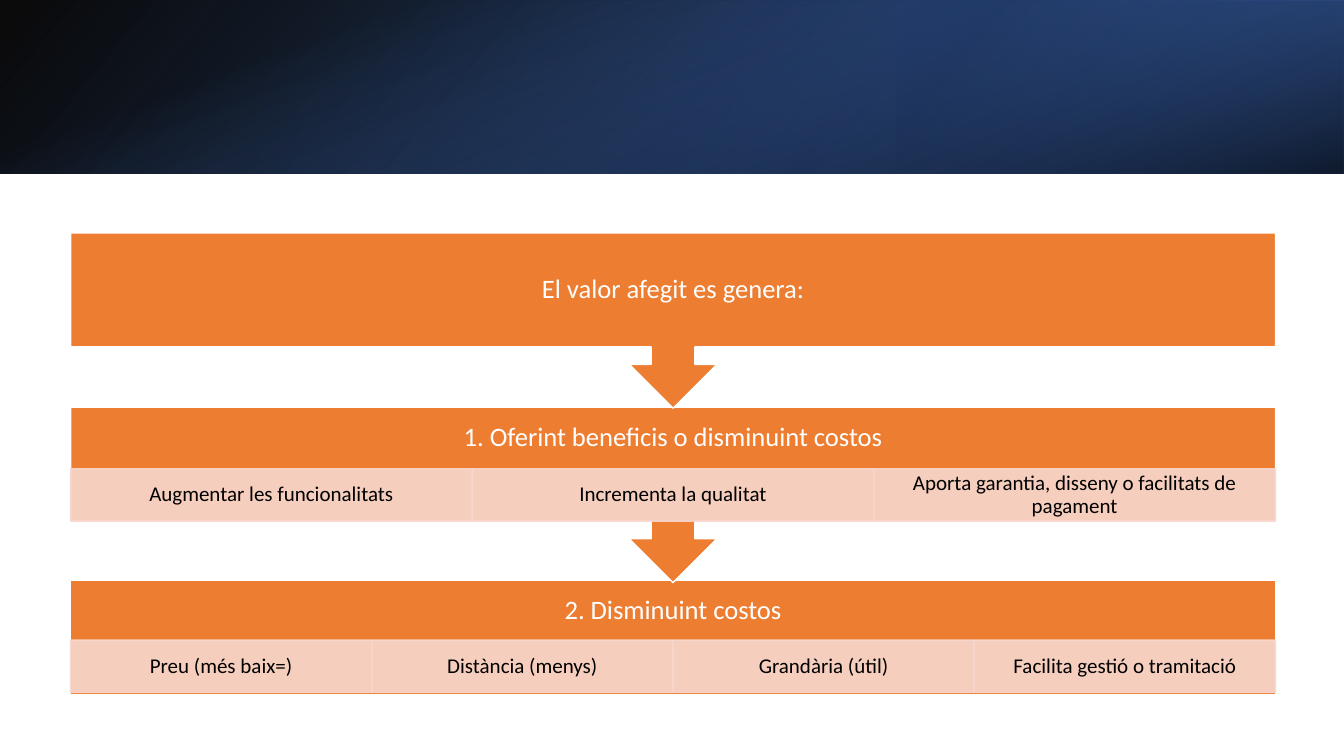
"""Slide on how added value is generated: a three-step flow under a gradient banner."""
from lxml import etree
from pptx import Presentation
from pptx.dml.color import RGBColor
from pptx.enum import shapes, text
from pptx.oxml.ns import qn
from pptx.util import Inches, Pt

BLACK = RGBColor(0x00, 0x00, 0x00)
WHITE = RGBColor(0xFF, 0xFF, 0xFF)
BLUE = RGBColor(0x44, 0x72, 0xC4)
MID_BLUE = RGBColor(0x2F, 0x55, 0x97)
DARK_BLUE = RGBColor(0x20, 0x38, 0x64)
ORANGE = RGBColor(0xED, 0x7D, 0x31)
PEACH = RGBColor(0xF8, 0xD7, 0xCE)

LEFT, WIDTH = 0.7, 11.95
BANNER_HEIGHT = 1.72
CELL_HEIGHT = 0.52

deck = Presentation()
deck.slide_width, deck.slide_height = Inches(13.33), Inches(7.5)
slide = deck.slides.add_slide(deck.slide_layouts[6])


def set_alphas(shape, alphas):
    """Give each colour of the shape its opacity in percent."""
    colours = list(shape._element.spPr.iter(qn("a:srgbClr")))
    for colour, alpha in zip(colours, alphas):
        etree.SubElement(colour, qn("a:alpha")).set("val", str(alpha * 1000))


def write_label(shape, wording, size, colour, side, top):
    """Write one centred line of text with the given insets."""
    frame = shape.text_frame
    frame.word_wrap = True
    frame.vertical_anchor = text.MSO_ANCHOR.MIDDLE
    frame.margin_left = frame.margin_right = Inches(side)
    frame.margin_top = frame.margin_bottom = Inches(top)
    paragraph = frame.paragraphs[0]
    paragraph.text = wording
    paragraph.alignment = text.PP_ALIGN.CENTER
    paragraph.line_spacing = 0.9
    paragraph.font.size = Pt(size)
    paragraph.font.name = "Calibri"
    paragraph.font.color.rgb = colour


banner_layers = [
    ((0, 0, 13.33, BANNER_HEIGHT), 0, True, 140, [(0, BLACK, 96), (1, MID_BLUE, 100)]),
    ((8.89, 0, 4.44, BANNER_HEIGHT), 180, True, 320, [(0.19, DARK_BLUE, 68), (1, BLUE, 79)]),
    ((5.8, -5.8, BANNER_HEIGHT, 13.33), 90, False, 340, [(0.23, BLUE, 0), (0.99, BLACK, 74)]),
]
for box, rotation, flipped, angle, stops in banner_layers:
    layer = slide.shapes.add_shape(shapes.MSO_SHAPE.RECTANGLE, *map(Inches, box))
    layer.shadow.inherit = False
    layer.rotation = rotation
    if flipped:
        layer._element.spPr.xfrm.set("flipH", "1")
    layer.line.fill.background()
    layer.fill.gradient()
    layer.fill.gradient_angle = 360 - angle
    for stop, (position, colour, _) in zip(layer.fill.gradient_stops, stops):
        stop.position = position
        stop.color.rgb = colour
    set_alphas(layer, [alpha for _, _, alpha in stops])

CALLOUT = shapes.MSO_SHAPE.UP_ARROW_CALLOUT
steps = [
    (shapes.MSO_SHAPE.RECTANGLE, 5.76, 1.13, 0, "2. Disminuint costos", 0.61, 6.35,
     ["Preu (més baix=)", "Distància (menys)", "Grandària (útil)", "Facilita gestió o tramitació"]),
    (CALLOUT, 4.04, 1.74, 180, "1. Oferint beneficis o disminuint costos", 0.61, 4.65,
     ["Augmentar les funcionalitats", "Incrementa la qualitat",
      "Aporta garantia, disseny o facilitats de pagament"]),
    (CALLOUT, 2.31, 1.74, 180, "El valor afegit es genera:", 1.13, 0, []),
]
for outline, top, height, rotation, heading, heading_height, cell_top, details in steps:
    step = slide.shapes.add_shape(outline, Inches(LEFT), Inches(top), Inches(WIDTH), Inches(height))
    step.shadow.inherit = False
    step.rotation = rotation
    step.fill.solid()
    step.fill.fore_color.rgb = ORANGE
    step.line.color.rgb = WHITE
    step.line.width = Pt(1)

    title = slide.shapes.add_textbox(Inches(LEFT), Inches(top), Inches(WIDTH), Inches(heading_height))
    write_label(title, heading, 19, WHITE, 0.15, 0.15)

    for column, detail in enumerate(details):
        cell_width = WIDTH / len(details)
        cell = slide.shapes.add_shape(
            shapes.MSO_SHAPE.RECTANGLE, Inches(LEFT + column * cell_width), Inches(cell_top),
            Inches(cell_width), Inches(CELL_HEIGHT))
        cell.shadow.inherit = False
        cell.fill.solid()
        cell.fill.fore_color.rgb = PEACH
        cell.line.color.rgb = PEACH
        cell.line.width = Pt(1)
        set_alphas(cell, [90, 90])
        write_label(cell, detail, 15, BLACK, 0.12, 0.02)

deck.save("out.pptx")
